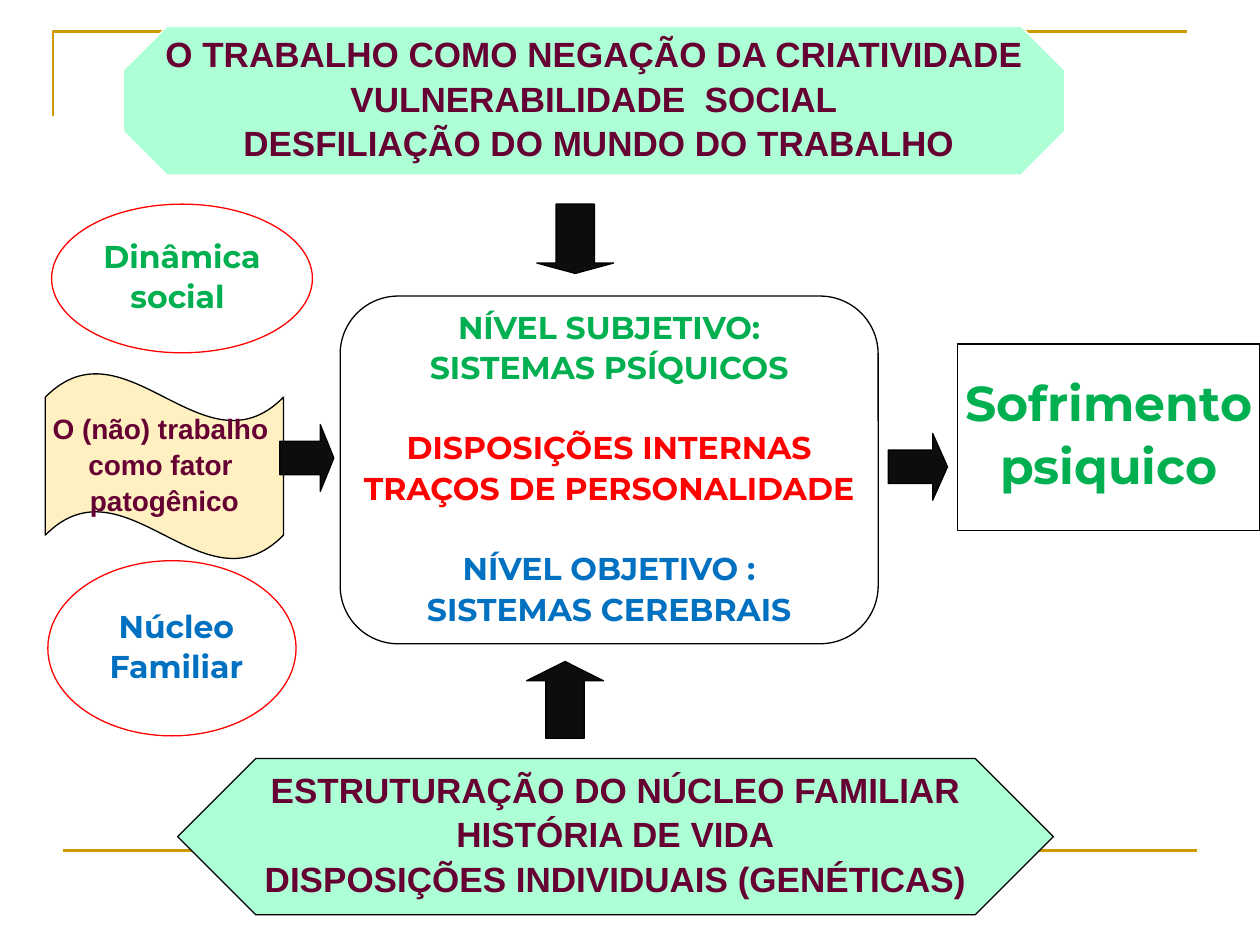
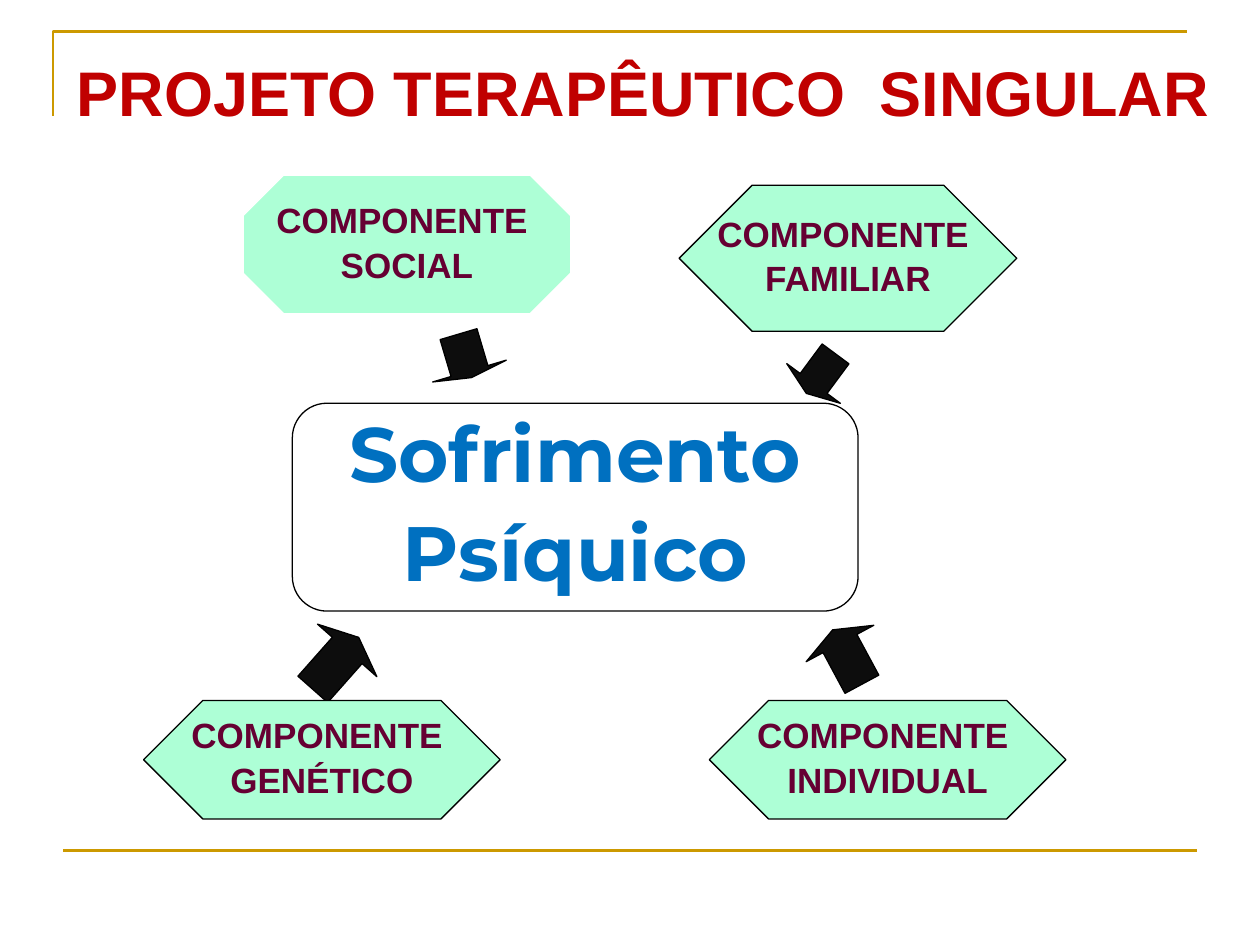
"""Build two slides on work, psychic suffering and the therapeutic project."""
from lxml import etree
from pptx import Presentation
from pptx import util as u
from pptx.dml.color import RGBColor
from pptx.enum import shapes, text
from pptx.oxml import ns

GOLD = RGBColor(0xCC, 0x99, 0x00)
MINT = RGBColor(0xAD, 0xFF, 0xD6)
CREAM = RGBColor(0xFF, 0xF0, 0xC2)
WHITE = RGBColor(0xFF, 0xFF, 0xFF)
BLACK = RGBColor(0x00, 0x00, 0x00)
COAL = RGBColor(0x0D, 0x0D, 0x0D)
PLUM = RGBColor(0x66, 0x00, 0x33)
GREEN = RGBColor(0x00, 0xB0, 0x50)
BLUE = RGBColor(0x00, 0x70, 0xC0)
RED = RGBColor(0xFF, 0x00, 0x00)
WINE = RGBColor(0xC0, 0x00, 0x00)
KIND = shapes.MSO_SHAPE
MID = text.PP_ALIGN.CENTER


def write(shape, words, size=20, face="Arial", tint=PLUM, align=MID, wrap=False):
    frame = shape.text_frame
    frame.word_wrap = wrap
    frame.vertical_anchor = text.MSO_ANCHOR.MIDDLE
    for i, line in enumerate(words.split("\n")):
        para = frame.add_paragraph() if i else frame.paragraphs[0]
        para.alignment = align
        para.line_spacing = 0.9
        para.space_before = u.Pt(0)
        gap = para._p.pPr.find(ns.qn("a:spcBef"))
        gap.remove(gap[0])
        etree.SubElement(gap, ns.qn("a:spcPct"), val="20000")
        run = para.add_run()
        run.text = line
        run.font.size = u.Pt(size)
        run.font.name = face
        run.font.bold = True
        run.font.color.rgb = tint


def draw(page, kind, box, fill=WHITE, edge=BLACK, turn=0, adj=()):
    shape = page.shapes.add_shape(kind, *map(u.Inches, box))
    shape.shadow.inherit = False
    shape.fill.solid()
    shape.fill.fore_color.rgb = fill
    shape.line.color.rgb = edge
    shape.line.width = u.Pt(0.75)
    shape.rotation = turn
    for i, val in enumerate(adj):
        shape.adjustments[i] = val
    return shape


deck = Presentation()
deck.slide_width = u.Inches(10)
deck.slide_height = u.Inches(7.5)
first = deck.slides.add_slide(deck.slide_layouts[6])
second = deck.slides.add_slide(deck.slide_layouts[5])

pen = first.shapes.build_freeform(u.Inches(0.42), u.Inches(0.92))
pen.add_line_segments([(u.Inches(0.42), u.Inches(0.25)), (u.Inches(9.42), u.Inches(0.25))], close=False)
frame = pen.convert_to_shape()
frame.fill.background()
frame.shadow.inherit = False
base = first.shapes.add_connector(shapes.MSO_CONNECTOR.STRAIGHT, u.Inches(0.5), u.Inches(6.75), u.Inches(9.5), u.Inches(6.75))
etree.SubElement(base.element.spPr, ns.qn("a:effectLst"))
for num, rule in enumerate((frame, base), 101):
    rule.line.color.rgb = GOLD
    rule.line.width = u.Pt(1.5)
    rule.element.xpath(".//p:cNvPr")[0].set("id", str(num))
    deck.slide_master.element.cSld.spTree.append(rule.element)

title = second.shapes.title
title.left, title.top, title.width, title.height = map(u.Inches, (0.51, 0.44, 9.3, 0.65))
write(title, "PROJETO TERAPÊUTICO  SINGULAR", size=36, tint=WINE, align=text.PP_ALIGN.LEFT, wrap=True)

bands = [
    (first, (0.98, 0.21, 7.47, 1.18), 0.293, WHITE,
     "O TRABALHO COMO NEGAÇÃO DA CRIATIVIDADE\nVULNERABILIDADE  SOCIAL\n DESFILIAÇÃO DO MUNDO DO TRABALHO"),
    (first, (1.41, 6.02, 6.95, 1.24), 0.5, BLACK,
     "ESTRUTURAÇÃO DO NÚCLEO FAMILIAR\nHISTÓRIA DE VIDA\nDISPOSIÇÕES INDIVIDUAIS (GENÉTICAS)"),
    (second, (1.93, 1.39, 2.6, 1.1), 0.293, WHITE, "COMPONENTE \nSOCIAL"),
    (second, (5.39, 1.47, 2.68, 1.16), 0.5, BLACK, "COMPONENTE \nFAMILIAR"),
    (second, (1.14, 5.56, 2.83, 0.94), 0.5, BLACK, "COMPONENTE \nGENÉTICO"),
    (second, (5.63, 5.56, 2.83, 0.94), 0.5, BLACK, "COMPONENTE \nINDIVIDUAL"),
]

cards = [
    (first, KIND.OVAL, (0.41, 1.62, 2.07, 1.18), RED, "Dinâmica\nsocial ", 18, GREEN),
    (first, KIND.OVAL, (0.38, 4.45, 1.97, 1.39), RED, " Núcleo\n Familiar", 18, BLUE),
    (first, KIND.RECTANGLE, (7.6, 2.73, 2.4, 1.48), BLACK, "Sofrimento\npsiquico", 28, GREEN),
    (second, KIND.FLOWCHART_ALTERNATE_PROCESS, (2.32, 3.2, 4.49, 1.65), BLACK, "Sofrimento\nPsíquico", 44, BLUE),
]
for page, kind, box, edge, words, size, tint in cards:
    write(draw(page, kind, box, edge=edge), words, size=size, face="Montserrat", tint=tint)

core = draw(first, KIND.FLOWCHART_ALTERNATE_PROCESS, (2.7, 2.35, 4.27, 2.76))
write(core, "NÍVEL SUBJETIVO:\nSISTEMAS PSÍQUICOS\nDISPOSIÇÕES INTERNAS\nTRAÇOS DE PERSONALIDADE\n"
      "NÍVEL OBJETIVO :\nSISTEMAS CEREBRAIS", size=18, face="Montserrat")
for i, para in enumerate(core.text_frame.paragraphs):
    para.runs[0].font.color.rgb = (GREEN, RED, BLUE)[i // 2]
    if i in (2, 4):
        para.space_before = u.Pt(26.5)

wave = draw(first, KIND.WAVE, (0.36, 2.96, 1.89, 1.48), fill=CREAM, adj=(0.13, 0))
write(wave, "O (não) trabalho \ncomo fator \npatogênico", size=16)

darts = [
    (first, (7.05, 3.44, 0.47, 0.53), 0, 0.25),
    (first, (2.22, 3.37, 0.43, 0.53), 0, 0.25),
    (first, (4.18, 5.25, 0.61, 0.61), 270, 0.25),
    (first, (4.29, 1.59, 0.55, 0.61), 90, 0.15),
    (second, (6.32, 2.7, 0.39, 0.53), 126.5, 0.25),
    (second, (6.48, 4.91, 0.49, 0.61), 241.7, 0.25),
    (second, (3.51, 2.52, 0.36, 0.61), 73.5, 0.15),
    (second, (2.39, 4.95, 0.55, 0.63), 311.5, 0.25),
]
for page, box, turn, head in darts:
    draw(page, KIND.RIGHT_ARROW, box, fill=COAL, turn=turn, adj=(0.5, head))

for page, box, cut, edge, words in bands:
    write(draw(page, KIND.OCTAGON, box, fill=MINT, edge=edge, adj=(cut,)), words)

deck.save("out.pptx")
